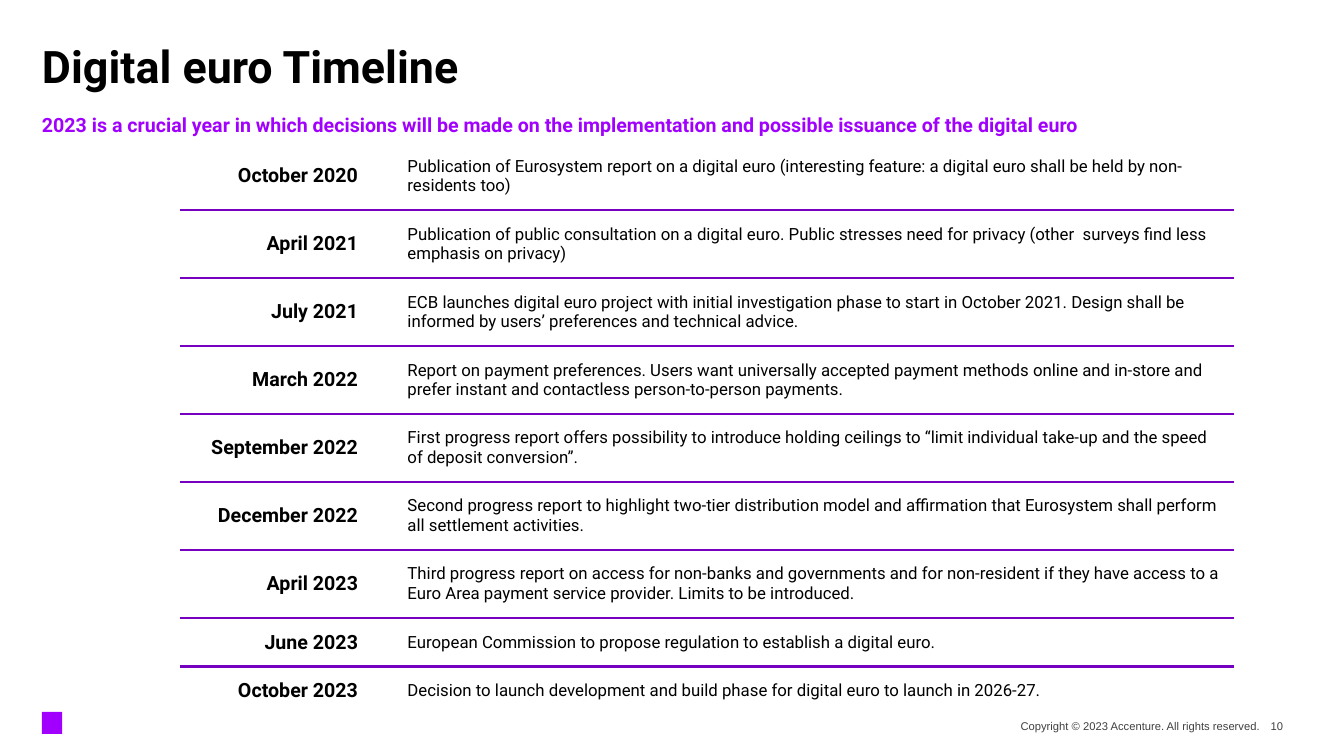
from dataclasses import dataclass

from lxml import etree
from pptx import Presentation
from pptx.dml.color import RGBColor
from pptx.enum.shapes import MSO_SHAPE
from pptx.enum.text import MSO_ANCHOR, PP_ALIGN
from pptx.oxml import parse_xml
from pptx.oxml.ns import nsdecls, qn
from pptx.slide import Slide
from pptx.table import Table, _Cell
from pptx.text.text import TextFrame
from pptx.util import Pt

RECTANGLE = MSO_SHAPE.RECTANGLE
TOP, MIDDLE = MSO_ANCHOR.TOP, MSO_ANCHOR.MIDDLE
LEFT, RIGHT = PP_ALIGN.LEFT, PP_ALIGN.RIGHT
COLORS = {"ink": "000000", "accent": "A100FF", "rule": "7500C0", "footer": "404040"}
PLAIN_TABLE_STYLE = "{2D5ABB26-0587-4C30-8999-92F81FD0307C}"
COLUMN_WIDTHS = (134.6, 22.3, 596.2)
TALL_ROW, SHORT_ROW = 48.57, 34.8
RULE_WIDTH = 2.25


@dataclass(frozen=True)
class TextStyle:
    size: float
    color: str
    font: str = "Roboto"
    bold: bool = False
    align: PP_ALIGN = LEFT
    anchor: MSO_ANCHOR = TOP


@dataclass(frozen=True)
class Label:
    text: str
    left: float
    top: float
    width: float
    height: float
    style: TextStyle


@dataclass(frozen=True)
class Milestone:
    date: str
    event: str
    height: float = TALL_ROW


TITLE_STYLE = TextStyle(32, "ink", bold=True)
DATE_STYLE = TextStyle(14, "ink", bold=True, align=RIGHT)
EVENT_STYLE = TextStyle(12, "ink")
FOOTER_STYLE = TextStyle(8, "footer", font="Arial", align=RIGHT, anchor=MIDDLE)

LABELS = (
    Label(
        "2023 is a crucial year in which decisions will be made on the "
        "implementation and possible issuance of the digital euro",
        30, 80.6, 900, 30, TextStyle(14, "accent", bold=True),
    ),
    Label("Copyright © 2023 Accenture. All rights reserved.",
          707.8, 510.3, 192.4, 17, FOOTER_STYLE),
    Label("10", 900, 510.3, 16.6, 17, FOOTER_STYLE),
)

MILESTONES = (
    Milestone("October 2020", "Publication of Eurosystem report on a digital euro "
              "(interesting feature: a digital euro shall be held by non-residents too)"),
    Milestone("April 2021", "Publication of public consultation on a digital euro. Public "
              "stresses need for privacy (other  surveys find less emphasis on privacy)"),
    Milestone("July 2021", "ECB launches digital euro project with initial investigation "
              "phase to start in October 2021. Design shall be informed by users’ "
              "preferences and technical advice."),
    Milestone("March 2022", "Report on payment preferences. Users want universally accepted "
              "payment methods online and in-store and prefer instant and contactless "
              "person-to-person payments."),
    Milestone("September 2022", "First progress report offers possibility to introduce holding "
              "ceilings to “limit individual take-up and the speed of deposit conversion”."),
    Milestone("December 2022", "Second progress report to highlight two-tier distribution model "
              "and affirmation that Eurosystem shall perform all settlement activities."),
    Milestone("April 2023", "Third progress report on access for non-banks and governments and "
              "for non-resident if they have access to a Euro Area payment service provider. "
              "Limits to be introduced."),
    Milestone("June 2023", "European Commission to propose regulation to establish a "
              "digital euro.", SHORT_ROW),
    Milestone("October 2023", "Decision to launch development and build phase for digital euro "
              "to launch in 2026-27.", SHORT_ROW),
)


def color(name: str) -> RGBColor:
    return RGBColor.from_string(COLORS[name])


def write_text(text_frame: TextFrame, text: str, style: TextStyle) -> None:
    text_frame.text = text
    paragraph = text_frame.paragraphs[0]
    paragraph.alignment = style.align
    font = paragraph.runs[0].font
    font.name = style.font
    font.size = Pt(style.size)
    font.bold = style.bold
    font.color.rgb = color(style.color)


def set_frame(text_frame: TextFrame, anchor: MSO_ANCHOR, top_margin: float = 0) -> None:
    text_frame.word_wrap = True
    text_frame.vertical_anchor = anchor
    text_frame.margin_left = text_frame.margin_right = text_frame.margin_bottom = 0
    text_frame.margin_top = Pt(top_margin)


def add_title(slide: Slide) -> None:
    title = slide.shapes.title
    title.left, title.top, title.width, title.height = Pt(30), Pt(30), Pt(900), Pt(50.6)
    write_text(title.text_frame, "Digital euro Timeline", TITLE_STYLE)
    set_frame(title.text_frame, TOP, 5)
    title.text_frame.paragraphs[0].line_spacing = 0.8


def add_label(slide: Slide, label: Label) -> None:
    box = slide.shapes.add_textbox(
        Pt(label.left), Pt(label.top), Pt(label.width), Pt(label.height))
    write_text(box.text_frame, label.text, label.style)
    set_frame(box.text_frame, label.style.anchor)


def border(tag: str) -> etree._Element:
    return parse_xml(
        f'<a:{tag} {nsdecls("a")} w="{Pt(RULE_WIDTH)}"><a:solidFill>'
        f'<a:srgbClr val="{COLORS["rule"]}"/></a:solidFill></a:{tag}>')


def format_cell(cell: _Cell, edges: list[str]) -> None:
    cell.fill.background()
    cell.vertical_anchor = MIDDLE
    cell.margin_left, cell.margin_right = Pt(5.8), Pt(7.2)
    cell.margin_top = cell.margin_bottom = Pt(3.6)
    properties = cell._tc.get_or_add_tcPr()
    for position, edge in enumerate(edges):
        properties.insert(position, border(edge))


def fill_row(table: Table, index: int, milestone: Milestone) -> None:
    table.rows[index].height = Pt(milestone.height)
    edges = []
    if index > 0:
        edges.append("lnT")
    if index < len(MILESTONES) - 1:
        edges.append("lnB")
    for cell in table.rows[index].cells:
        format_cell(cell, edges)
    write_text(table.cell(index, 0).text_frame, milestone.date, DATE_STYLE)
    write_text(table.cell(index, 2).text_frame, milestone.event, EVENT_STYLE)


def add_timeline(slide: Slide) -> None:
    height = sum(milestone.height for milestone in MILESTONES)
    table = slide.shapes.add_table(
        len(MILESTONES), len(COLUMN_WIDTHS),
        Pt(128.4), Pt(101.5), Pt(sum(COLUMN_WIDTHS)), Pt(height)).table
    table.first_row = table.horz_banding = False
    table._tbl.tblPr.find(qn("a:tableStyleId")).text = PLAIN_TABLE_STYLE
    for column, width in zip(table.columns, COLUMN_WIDTHS):
        column.width = Pt(width)
    for index, milestone in enumerate(MILESTONES):
        fill_row(table, index, milestone)


def add_corner_mark(slide: Slide) -> None:
    mark = slide.shapes.add_shape(RECTANGLE, Pt(30), Pt(508.4), Pt(14.4), Pt(15.8))
    mark.shadow.inherit = False
    mark.fill.solid()
    mark.fill.fore_color.rgb = color("accent")
    mark.line.fill.background()


def main() -> None:
    presentation = Presentation()
    presentation.slide_width, presentation.slide_height = Pt(960), Pt(540)
    slide = presentation.slides.add_slide(presentation.slide_layouts[5])
    add_corner_mark(slide)
    add_title(slide)
    add_timeline(slide)
    for label in LABELS:
        add_label(slide, label)
    presentation.save("out.pptx")


if __name__ == "__main__":
    main()
